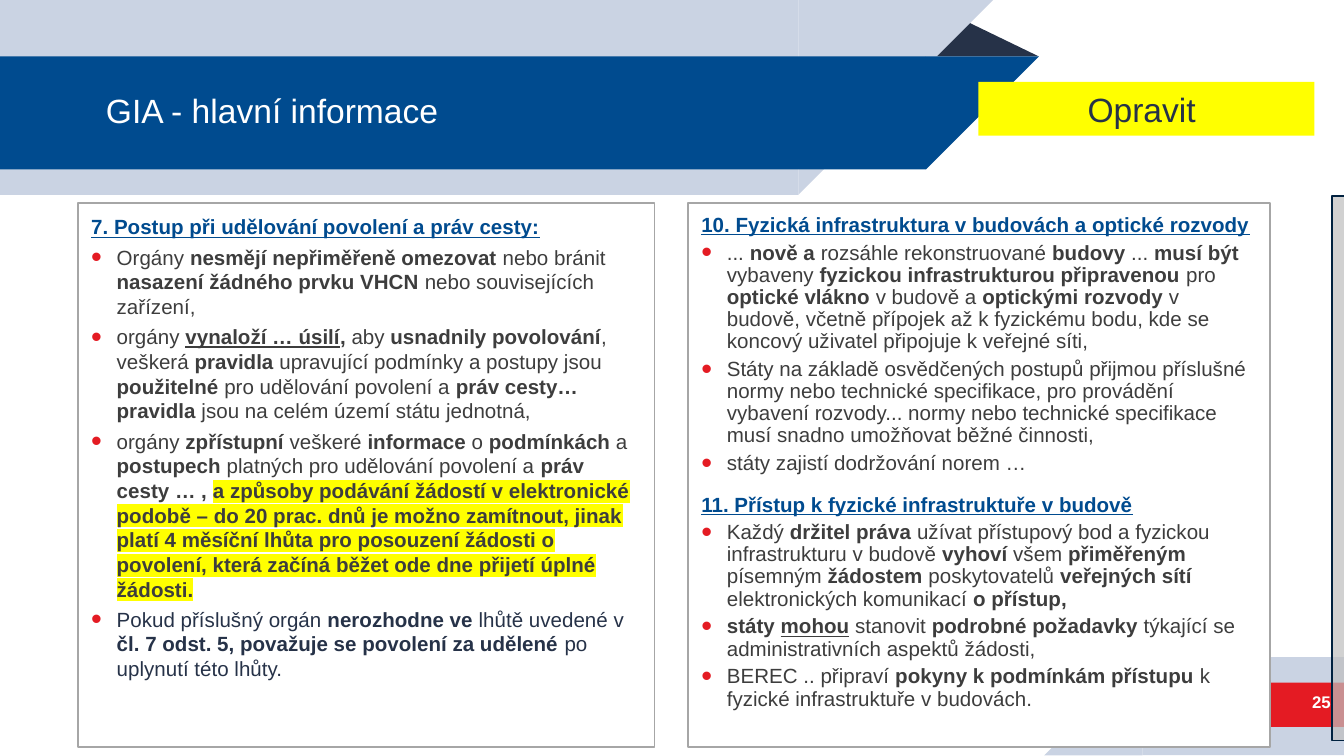
from dataclasses import dataclass
from typing import Optional

from lxml import etree
from pptx import Presentation
from pptx.dml.color import RGBColor
from pptx.enum.shapes import MSO_SHAPE
from pptx.enum.text import MSO_ANCHOR, PP_ALIGN
from pptx.oxml.ns import qn
from pptx.util import Inches, Pt

RECTANGLE = MSO_SHAPE.RECTANGLE
RIGHT_TRIANGLE = MSO_SHAPE.RIGHT_TRIANGLE
TRIANGLE = MSO_SHAPE.ISOSCELES_TRIANGLE
MIDDLE, TOP = MSO_ANCHOR.MIDDLE, MSO_ANCHOR.TOP
LEFT, CENTER, RIGHT = PP_ALIGN.LEFT, PP_ALIGN.CENTER, PP_ALIGN.RIGHT

NAVY = RGBColor(0x26, 0x32, 0x48)
PALE_BLUE = RGBColor(0xCA, 0xD3, 0xE3)
BLUE = RGBColor(0x00, 0x4B, 0x8F)
RED = RGBColor(0xE4, 0x1B, 0x23)
WHITE = RGBColor(0xFF, 0xFF, 0xFF)
YELLOW = RGBColor(0xFF, 0xFF, 0x00)
TEXT_GRAY = RGBColor(0x3D, 0x3D, 0x3D)
BORDER_GRAY = RGBColor(0xA6, 0xA6, 0xA6)
SHADE_GRAY = RGBColor(0xBF, 0xBF, 0xBF)
SHADE_BORDER = RGBColor(0x00, 0x21, 0x3F)

SLIDE_WIDTH = Inches(10)
SLIDE_HEIGHT = SLIDE_WIDTH * 9 // 16
FONT = "Arial"
BULLET_INDENT = Inches(0.19)
BOLD, UNDERLINE, HIGHLIGHT = "*", "_", "~"
MARKS = (BOLD, UNDERLINE, HIGHLIGHT)


@dataclass(frozen=True)
class Block:
    shape_type: MSO_SHAPE
    left: float
    top: float
    width: float
    height: float
    fill: RGBColor
    rotation: int = 0
    line: Optional[RGBColor] = None
    line_width: float = 0.75


@dataclass(frozen=True)
class Section:
    heading: str
    items: tuple[str, ...]


@dataclass(frozen=True)
class Panel:
    left: float
    width: float
    heading_spacing: float
    item_spacing: float
    sections: tuple[Section, ...]


BACKGROUND = (
    Block(TRIANGLE, 6.88, 0.14, 0.85, 0.28, NAVY),
    Block(RECTANGLE, 0, 0, 5.94, 1.45, PALE_BLUE),
    Block(RIGHT_TRIANGLE, 5.94, 0, 1.45, 1.45, PALE_BLUE, 90),
    Block(RECTANGLE, 0, 0.42, 6.89, 0.84, BLUE),
    Block(RIGHT_TRIANGLE, 6.89, 0.42, 0.84, 0.84, BLUE, 90),
    Block(RECTANGLE, 8.5, 4.89, 1.5, 0.73, PALE_BLUE),
    Block(RIGHT_TRIANGLE, 7.77, 4.89, 0.73, 0.73, PALE_BLUE, 270),
    Block(RECTANGLE, 7.93, 5.08, 2.07, 0.33, RED),
)

PERMITS = Section("7. Postup při udělování povolení a práv cesty:", (
    "Orgány *nesmějí nepřiměřeně omezovat *nebo bránit *nasazení žádného prvku VHCN *"
    "nebo souvisejících zařízení,",
    "orgány *_vynaloží … úsilí_, *aby *usnadnily povolování*, veškerá *pravidla* upravující "
    "podmínky a postupy jsou *použitelné* pro udělování povolení a *práv cesty… pravidla *"
    "jsou na celém území státu jednotná,",
    "orgány *zpřístupní* veškeré *informace* o *podmínkách* a *postupech* platných pro "
    "udělování povolení a *práv cesty … , ~a způsoby podávání žádostí v elektronické podobě "
    "– do 20 prac. dnů je možno zamítnout, jinak platí 4 měsíční lhůta pro posouzení žádosti "
    "o povolení, která začíná běžet ode dne přijetí úplné žádosti.~*",
    "Pokud příslušný orgán *nerozhodne ve *lhůtě uvedené v *čl. 7 odst. 5, považuje se "
    "povolení za udělené *po uplynutí této lhůty.",
))
BUILDINGS = Section("10. Fyzická infrastruktura v budovách a optické rozvody", (
    "... *nově a* rozsáhle rekonstruované *budovy* ... *musí být *vybaveny *fyzickou "
    "infrastrukturou připravenou *pro *optické vlákno *v budově a *optickými rozvody* "
    "v budově, včetně přípojek až k fyzickému bodu, kde se koncový uživatel připojuje "
    "k veřejné síti,",
    "Státy na základě osvědčených postupů přijmou příslušné normy nebo technické specifikace, "
    "pro provádění vybavení rozvody... normy nebo technické specifikace musí snadno "
    "umožňovat běžné činnosti,",
    "státy zajistí dodržování norem …",
))
ACCESS = Section("11. Přístup k fyzické infrastruktuře v budově", (
    "Každý *držitel práva *užívat přístupový bod a fyzickou infrastrukturu v budově *vyhoví* "
    "všem *přiměřeným* písemným *žádostem* poskytovatelů *veřejných sítí* elektronických "
    "komunikací *o přístup,*",
    "*státy _mohou_ *stanovit *podrobné požadavky *týkající se administrativních aspektů "
    "žádosti,",
    "BEREC .. připraví *pokyny k podmínkám přístupu *k fyzické infrastruktuře v budovách.",
))
PANELS = (
    Panel(0.58, 4.29, 1.2, 1.0, (PERMITS,)),
    Panel(5.12, 4.33, 1.1, 0.9, (BUILDINGS, ACCESS)),
)


def draw_block(slide, block: Block):
    shape = slide.shapes.add_shape(
        block.shape_type, Inches(block.left), Inches(block.top),
        Inches(block.width), Inches(block.height))
    shape.shadow.inherit = False
    shape.rotation = block.rotation
    shape.fill.solid()
    shape.fill.fore_color.rgb = block.fill
    if block.shape_type == TRIANGLE:
        shape.adjustments[0] = 0.32
    if block.line is None:
        shape.line.fill.background()
    else:
        shape.line.color.rgb = block.line
        shape.line.width = Pt(block.line_width)
    return shape


def add_bullet(paragraph) -> None:
    properties = paragraph._p.get_or_add_pPr()
    properties.set("marL", str(BULLET_INDENT))
    properties.set("indent", str(-BULLET_INDENT))
    color = etree.SubElement(properties, qn("a:buClr"))
    etree.SubElement(color, qn("a:srgbClr"), val=str(RED))
    etree.SubElement(properties, qn("a:buSzPct"), val="150000")
    etree.SubElement(properties, qn("a:buFont"), typeface=FONT)
    etree.SubElement(properties, qn("a:buChar"), char="•")


def add_highlight(run) -> None:
    highlight = etree.Element(qn("a:highlight"))
    etree.SubElement(highlight, qn("a:srgbClr"), val=str(YELLOW))
    run._r.get_or_add_rPr().find(qn("a:solidFill")).addnext(highlight)


def split_marks(text: str) -> list[tuple[str, frozenset[str]]]:
    pieces, active, current = [], frozenset(), ""
    for character in text:
        if character in MARKS:
            if current:
                pieces.append((current, active))
            active, current = active ^ {character}, ""
        else:
            current += character
    return pieces + [(current, active)] if current else pieces


def write_text(frame, text: str, *, size: float = 11, color: RGBColor = TEXT_GRAY,
               align: PP_ALIGN = LEFT, line_spacing: float = 1.0,
               space_before: float = 0, bullet: bool = False) -> None:
    first = not frame.paragraphs[0].runs
    paragraph = frame.paragraphs[0] if first else frame.add_paragraph()
    paragraph.alignment = align
    paragraph.line_spacing = line_spacing
    paragraph.space_before = Pt(0 if first else space_before)
    if bullet:
        add_bullet(paragraph)
    for piece, marks in split_marks(text):
        run = paragraph.add_run()
        run.text = piece
        run.font.name = FONT
        run.font.size = Pt(size)
        run.font.bold = BOLD in marks
        run.font.underline = UNDERLINE in marks
        run.font.color.rgb = color
        if HIGHLIGHT in marks:
            add_highlight(run)


def add_text_frame(slide, left: float, top: float, width: float, height: float):
    frame = slide.shapes.add_textbox(
        Inches(left), Inches(top), Inches(width), Inches(height)).text_frame
    frame.word_wrap = True
    frame.vertical_anchor = MIDDLE
    return frame


def draw_panel(slide, panel: Panel) -> None:
    frame = draw_block(slide, Block(RECTANGLE, panel.left, 1.51, panel.width, 4.05,
                                    WHITE, line=BORDER_GRAY)).text_frame
    frame.vertical_anchor = TOP
    for section in panel.sections:
        write_text(frame, f"*_{section.heading}_*", color=BLUE,
                   line_spacing=panel.heading_spacing, space_before=7.5)
        for item in section.items:
            color = NAVY if item.startswith("Pokud") else TEXT_GRAY
            write_text(frame, item, color=color, line_spacing=panel.item_spacing,
                       space_before=3, bullet=True)


def main() -> None:
    presentation = Presentation()
    presentation.slide_width, presentation.slide_height = SLIDE_WIDTH, SLIDE_HEIGHT
    slide = presentation.slides.add_slide(presentation.slide_layouts[6])
    for block in BACKGROUND:
        draw_block(slide, block)
    write_text(add_text_frame(slide, 0.69, 0.42, 6.8, 0.84), "GIA - hlavní informace",
               size=18, color=WHITE, line_spacing=0.9)
    write_text(add_text_frame(slide, 8.95, 5.07, 1.05, 0.3), "*25*",
               size=9, color=WHITE, align=RIGHT)
    for panel in PANELS:
        draw_panel(slide, panel)
    label = draw_block(slide, Block(RECTANGLE, 7.28, 0.61, 2.5, 0.4, YELLOW))
    write_text(label.text_frame, "Opravit ", size=18, color=NAVY, align=CENTER)
    shade = draw_block(slide, Block(RECTANGLE, 9.91, 1.46, 4.33, 4.05, SHADE_GRAY,
                                    line=SHADE_BORDER, line_width=1))
    shade_color = shade._element.spPr.find(qn("a:solidFill"))[0]
    etree.SubElement(shade_color, qn("a:alpha"), val="71000")
    presentation.save("out.pptx")


if __name__ == "__main__":
    main()
